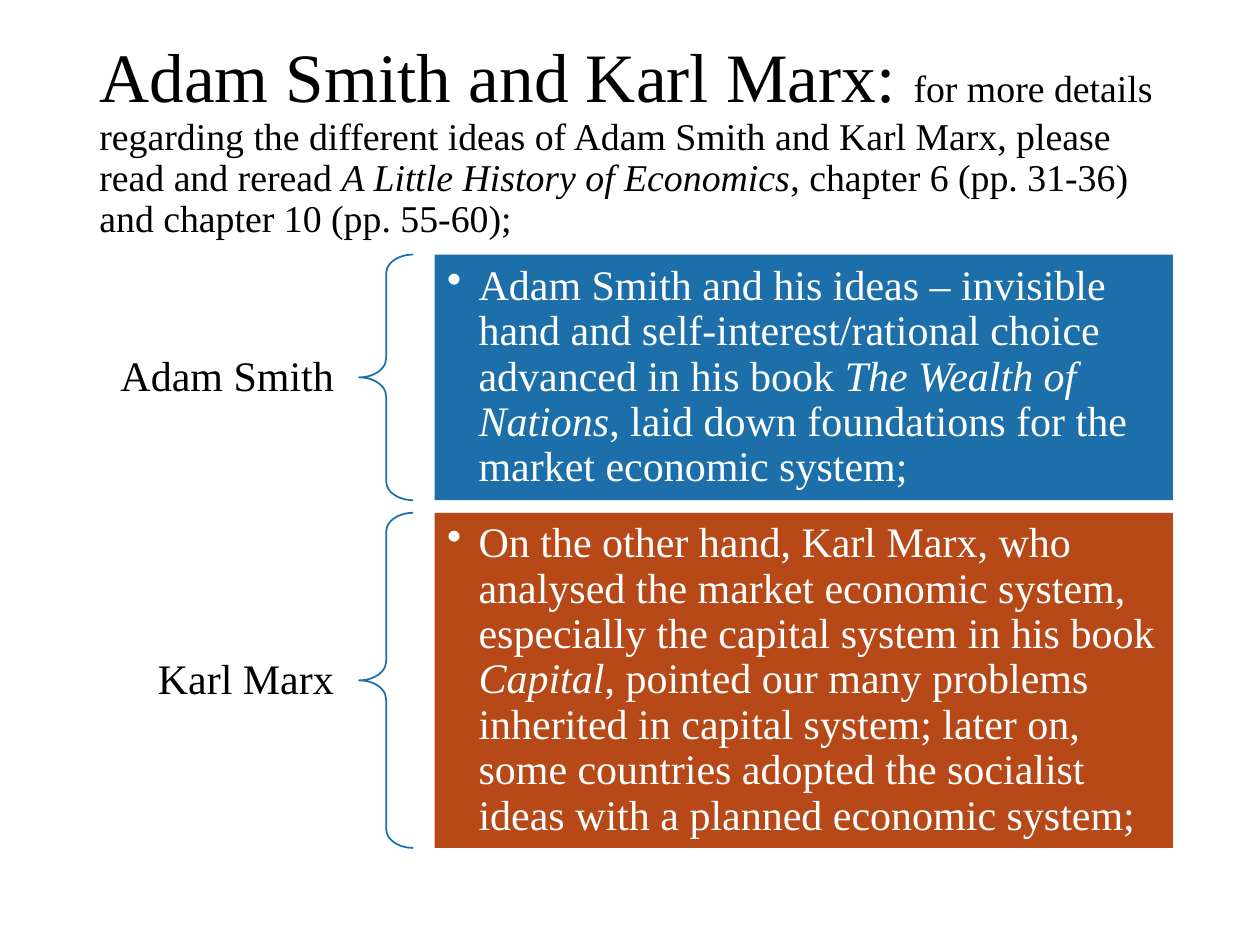
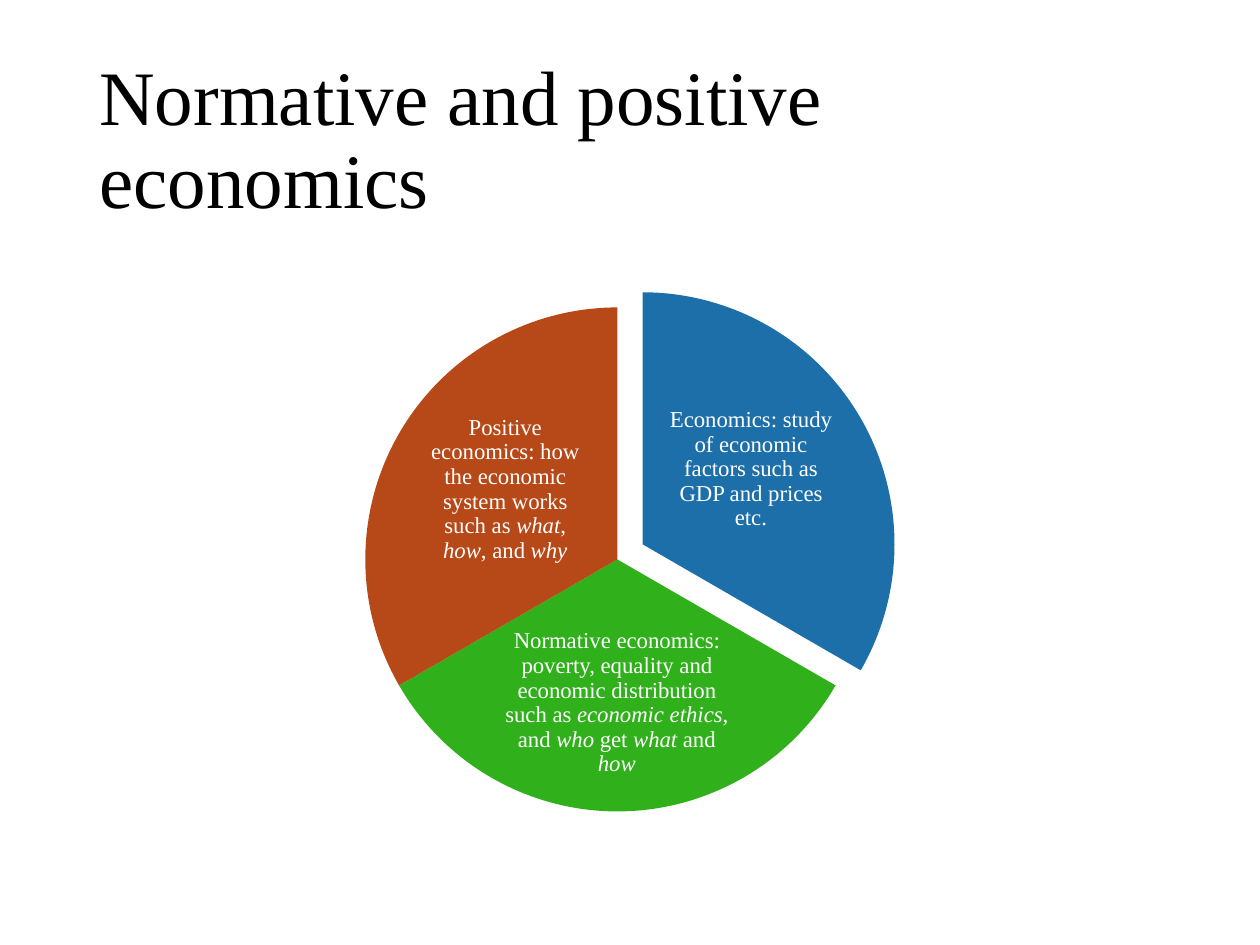
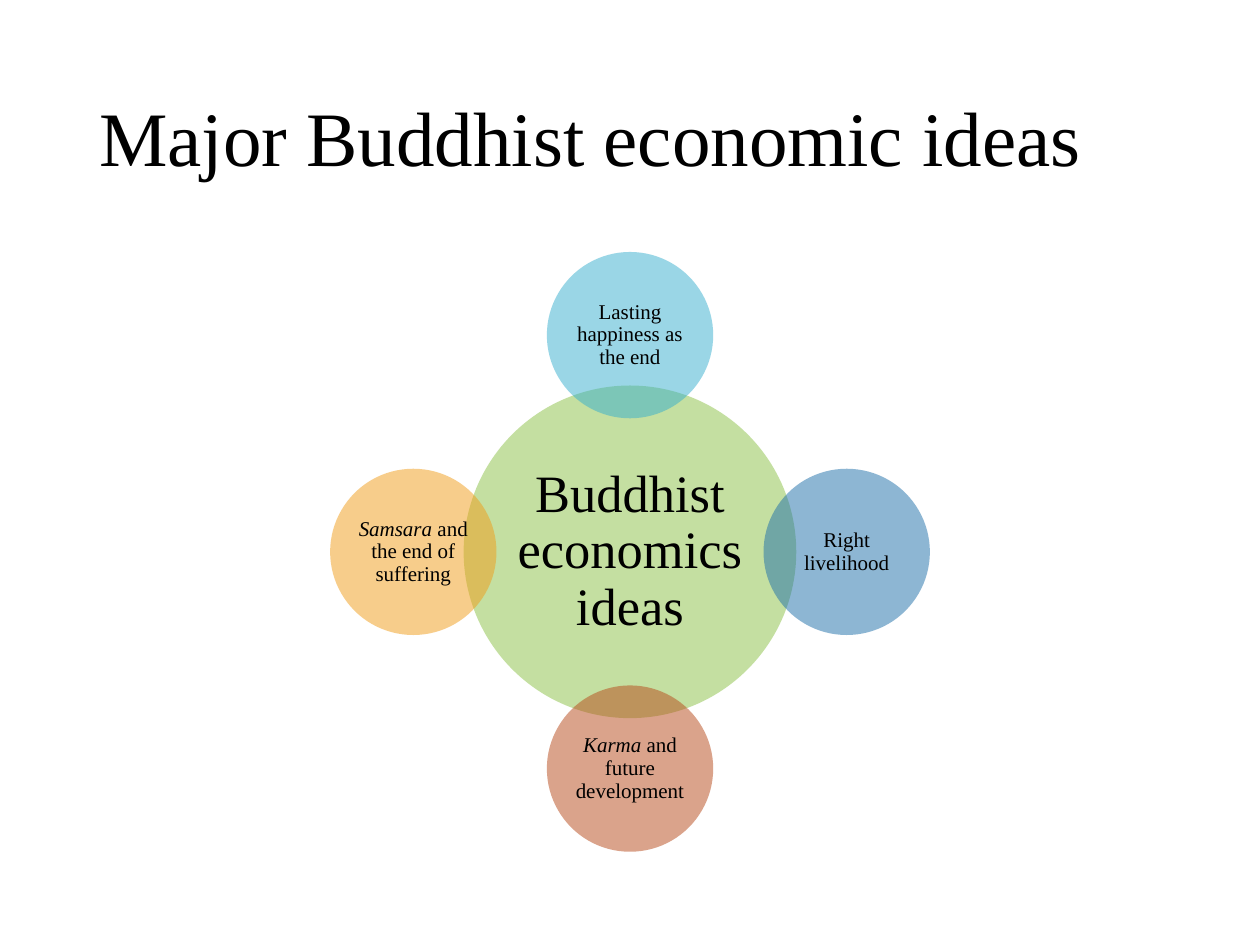
"""Build three slides on schools of economic thought."""
from dataclasses import dataclass
from math import cos, pi, sin

from lxml.etree import SubElement
from pptx import Presentation
from pptx.dml.color import RGBColor
from pptx.enum.shapes import MSO_SHAPE as Preset
from pptx.enum.text import MSO_ANCHOR as Anchor, PP_ALIGN as Align
from pptx.oxml.ns import qn
from pptx.shapes.autoshape import Shape
from pptx.slide import Slide
from pptx.util import Inches, Pt


@dataclass(frozen=True)
class Theme:
    font: str = "Times New Roman"
    blue: str = "1D6FA9"
    rust: str = "B74919"
    green: str = "30B01B"
    lime: str = "8BC145"
    aqua: str = "36AFCE"
    amber: str = "F19D19"
    black: str = "000000"
    white: str = "FFFFFF"
    title_size: float = 44
    long_title_size: float = 39.6
    subtitle_size: float = 21.6
    body_size: float = 24
    hub_size: float = 30
    slice_size: float = 13
    satellite_size: float = 12
    line_spacing: float = 0.9


THEME = Theme()


@dataclass(frozen=True)
class Box:
    left: float
    top: float
    width: float
    height: float

    def lengths(self) -> tuple:
        return tuple(Inches(n) for n in (self.left, self.top, self.width, self.height))


@dataclass(frozen=True)
class TextStyle:
    size: float
    color: str
    align: Align = Align.CENTER
    inset_x: float = 0.02
    inset_y: float = 0.02


@dataclass(frozen=True)
class Thinker:
    name: str
    ideas: str
    color: str
    height: float


@dataclass(frozen=True)
class Slice:
    text: str
    color: str
    pie_left: float
    pie_top: float
    label: Box


@dataclass(frozen=True)
class Satellite:
    text: str
    color: str


TITLE_BOX = Box(0.69, 0.4, 8.62, 1.45)
TITLE = TextStyle(THEME.title_size, THEME.black, Align.LEFT, 0.1, 0.05)
NAME = TextStyle(THEME.body_size, THEME.black, Align.RIGHT, 0.19, 0.07)
IDEAS = TextStyle(THEME.body_size, THEME.white, Align.LEFT, 0.1, 0.1)
SLICE = TextStyle(THEME.slice_size, THEME.white)
HUB = TextStyle(THEME.hub_size, THEME.black, inset_x=0.04, inset_y=0.04)
SATELLITE = TextStyle(THEME.satellite_size, THEME.black)

THINKERS = (
    Thinker("Adam Smith",
            "Adam Smith and his ideas – invisible hand and self-interest/rational choice "
            "advanced in his book *The Wealth of Nations*, laid down foundations for the "
            "market economic system;", THEME.blue, 1.95),
    Thinker("Karl Marx",
            "On the other hand, Karl Marx, who analysed the market economic system, "
            "especially the capital system in his book *Capital*, pointed our many problems "
            "inherited in capital system; later on, some countries adopted the socialist "
            "ideas with a planned economic system;", THEME.rust, 2.66),
)
SLICES = (
    Slice("Economics: study of economic factors such as GDP and prices etc.",
          THEME.blue, 3.1, 2.32, Box(5.28, 3.06, 1.36, 1.33)),
    Slice("Normative economics: poverty, equality and economic distribution such as "
          "*economic ethics*, and *who *get *what *and *how*",
          THEME.green, 2.9, 2.44, Box(3.99, 4.96, 1.81, 1.24)),
    Slice("Positive economics: how the economic system works such as *what*, *how*, "
          "and *why*", THEME.rust, 2.9, 2.44, Box(3.33, 3.22, 1.36, 1.33)),
)
SATELLITES = (
    Satellite("Lasting happiness as the end", THEME.aqua),
    Satellite("Right livelihood", THEME.blue),
    Satellite("*Karma* and future development", THEME.rust),
    Satellite("*Samsara* and the end of suffering", THEME.amber),
)


def add_spans(para, text: str, size: float, color: str) -> None:
    """Add runs to a paragraph, with the words between asterisks in italics."""
    for index, words in enumerate(text.split("*")):
        if words:
            span = para.add_run()
            span.text = words
            span.font.name = THEME.font
            span.font.size = Pt(size)
            span.font.color.rgb = RGBColor.from_string(color)
            span.font.italic = index % 2 == 1


def write_text(shape: Shape, text: str, style: TextStyle):
    """Fill a shape with one paragraph and return that paragraph."""
    frame = shape.text_frame
    frame.word_wrap = True
    frame.vertical_anchor = Anchor.MIDDLE
    frame.margin_left = frame.margin_right = Inches(style.inset_x)
    frame.margin_top = frame.margin_bottom = Inches(style.inset_y)
    para = frame.paragraphs[0]
    para.alignment = style.align
    para.line_spacing = THEME.line_spacing
    add_spans(para, text, style.size, style.color)
    return para


def add_text(page: Slide, box: Box, text: str, style: TextStyle):
    """Add a text box and return its paragraph."""
    return write_text(page.shapes.add_textbox(*box.lengths()), text, style)


def add_filled(page: Slide, preset: Preset, box: Box, color: str) -> Shape:
    """Add a preset shape with a plain fill and no outline."""
    shape = page.shapes.add_shape(preset, *box.lengths())
    shape.shadow.inherit = False
    shape.fill.solid()
    shape.fill.fore_color.rgb = RGBColor.from_string(color)
    shape.line.fill.background()
    return shape


def add_brace(page: Slide, box: Box) -> None:
    """Add an outlined left brace."""
    brace = page.shapes.add_shape(Preset.LEFT_BRACE, *box.lengths())
    brace.shadow.inherit = False
    brace.fill.background()
    brace.line.color.rgb = RGBColor.from_string(THEME.blue)
    brace.line.width = Pt(1)
    brace.adjustments[0] = 0.35


def add_bullet(para, indent: float) -> None:
    """Give a paragraph a hanging round bullet."""
    properties = para._p.get_or_add_pPr()
    properties.set("marL", str(Inches(indent)))
    properties.set("indent", str(-Inches(indent)))
    SubElement(properties, qn("a:buChar"), char="•")


def add_circle(page: Slide, center_x: float, center_y: float, radius: float,
               color: str, text: str, style: TextStyle) -> None:
    """Add a half-transparent circle with text inside."""
    box = Box(center_x - radius, center_y - radius, 2 * radius, 2 * radius)
    circle = add_filled(page, Preset.OVAL, box, color)
    tint = circle.element.spPr.find(f"{qn('a:solidFill')}/{qn('a:srgbClr')}")
    SubElement(tint, qn("a:alpha"), val="50000")
    write_text(circle, text, style)


def draw_thinkers(page: Slide) -> None:
    """Draw the two thinkers with their braced idea panels."""
    para = add_text(page, TITLE_BOX, "", TITLE)
    add_spans(para, "Adam Smith and Karl Marx: ", THEME.long_title_size, THEME.black)
    add_spans(para, "for more details regarding the different ideas of Adam Smith and "
              "Karl Marx, please read and reread *A Little History of Economics*, "
              "chapter 6 (pp. 31-36) and chapter 10 (pp. 55-60);",
              THEME.subtitle_size, THEME.black)
    top, gap, name_height = 2.02, 0.1, 0.52
    for thinker in THINKERS:
        name_top = top + (thinker.height - name_height) / 2
        add_text(page, Box(0.69, name_top, 2.15, name_height), thinker.name, NAME)
        add_brace(page, Box(2.85, top, 0.43, thinker.height))
        panel = add_filled(page, Preset.RECTANGLE,
                           Box(3.45, top, 5.86, thinker.height), thinker.color)
        add_bullet(write_text(panel, thinker.ideas, IDEAS), 0.25)
        top += thinker.height + gap


def draw_pie(page: Slide) -> None:
    """Draw three equal slices clockwise from the top, the first pulled out."""
    add_text(page, TITLE_BOX, "Normative and positive economics", TITLE)
    sweep, units_per_degree = 360 / len(SLICES), 0.6
    for index, part in enumerate(SLICES):
        start = 270 + index * sweep
        wedge = add_filled(page, Preset.PIE, Box(part.pie_left, part.pie_top, 4, 4), part.color)
        wedge.adjustments[0] = start % 360 * units_per_degree
        wedge.adjustments[1] = (start + sweep) % 360 * units_per_degree
        add_text(page, part.label, part.text, SLICE)


def draw_hub(page: Slide) -> None:
    """Draw the central circle with satellites clockwise from the top."""
    add_text(page, TITLE_BOX, "Major Buddhist economic ideas", TITLE)
    center_x, center_y, orbit = 5, 4.38, 1.72
    add_circle(page, center_x, center_y, 1.32, THEME.lime, "Buddhist economics ideas", HUB)
    for index, satellite in enumerate(SATELLITES):
        angle = 2 * pi * index / len(SATELLITES)
        add_circle(page, center_x + orbit * sin(angle), center_y - orbit * cos(angle),
                   0.66, satellite.color, satellite.text, SATELLITE)


def main() -> None:
    """Build and save the deck."""
    deck = Presentation()
    deck.slide_width, deck.slide_height = Inches(10), Inches(7.5)
    for draw in (draw_thinkers, draw_pie, draw_hub):
        draw(deck.slides.add_slide(deck.slide_layouts[6]))
    deck.save("out.pptx")


if __name__ == "__main__":
    main()
